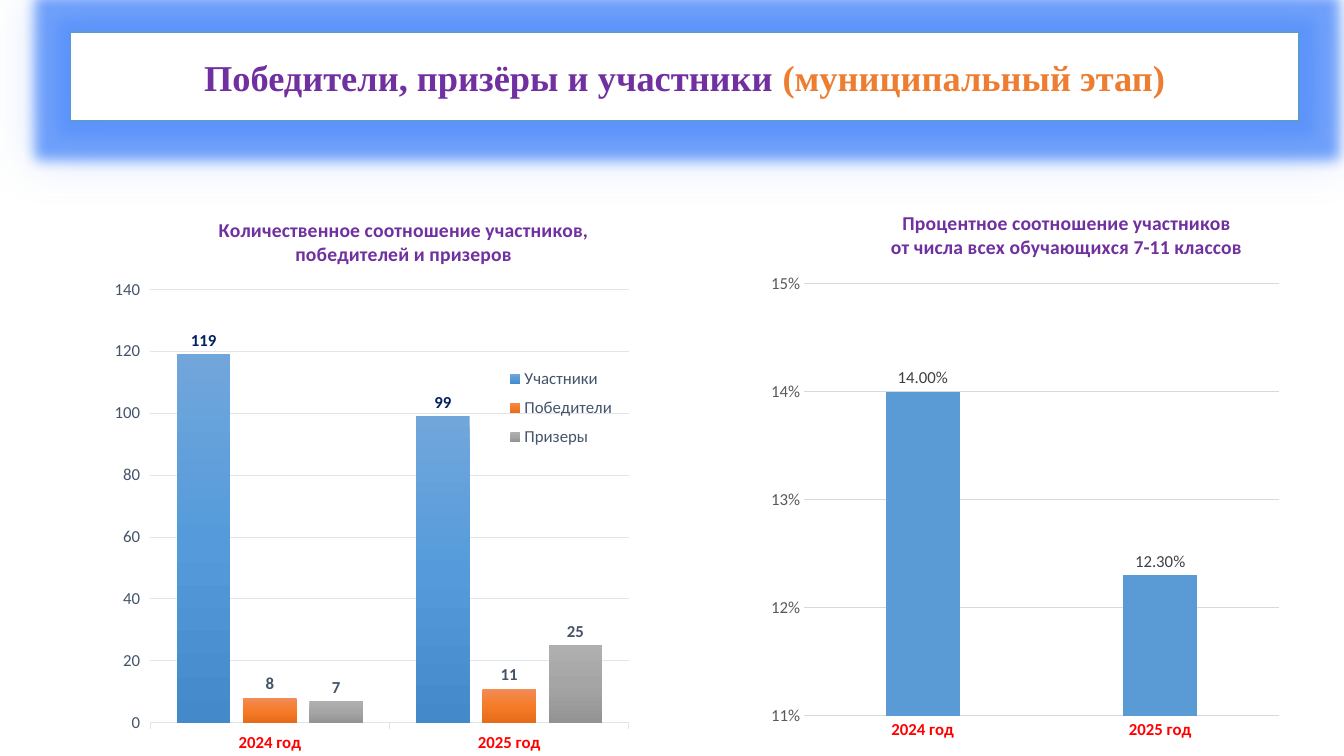
from dataclasses import dataclass
from copy import deepcopy

import lxml.etree
import pptx
import pptx.chart.data
import pptx.dml.color
import pptx.enum.chart
import pptx.enum.shapes
import pptx.enum.text
import pptx.oxml
import pptx.oxml.ns
import pptx.util

Cm, Pt = pptx.util.Cm, pptx.util.Pt
qn = pptx.oxml.ns.qn
COLORS = {
    "white": "FFFFFF", "blue": "5B9BD5", "glow": "5B93FA", "purple": "7030A0",
    "orange": "ED7D31", "red": "FF0000", "navy": "002060", "slate": "44546A",
    "gray": "595959", "dark": "404040", "grid": "D9D9D9", "pale": "E0E5EB",
}
YEARS = ["2024 год", "2025 год"]


@dataclass
class Series:
    name: str
    values: list[float]
    fill: list[str]
    label_color: str
    label_bold: bool = True


@dataclass
class Chart:
    box: tuple[float, float, float, float]
    title: str
    title_at: tuple[float, float]
    plot: tuple[float, float, float, float]
    series: list[Series]
    scale: tuple[float, float, float]
    axis_format: str
    label_format: str
    axis_color: str
    grid_color: str
    tick: pptx.enum.chart.XL_TICK_MARK
    gap: int
    overlap: int
    legend: tuple[float, float, float, float] | None = None


CHARTS = [
    Chart((19.25, 4.75, 15.62, 15.42),
          "Процентное соотношение участников\nот числа всех обучающихся 7-11 классов",
          (0.2, 0.03), (0.065, 0.156, 0.766, 0.706),
          [Series("Series 1", [0.14, 0.123], [COLORS["blue"]], "dark", False)],
          (0.11, 0.15, 0.01), "0%", "0.00%", "gray", "grid",
          pptx.enum.chart.XL_TICK_MARK.NONE, 219, -27),
    Chart((2.26, 5.08, 13.74, 14.25),
          "Количественное соотношение участников, победителей и призеров",
          (0.23, 0.02), (0.111, 0.155, 0.878, 0.767),
          [Series("Участники", [119, 99], ["71A6DB", "559BDB", "448ACA"], "navy"),
           Series("Победители", [8, 11], ["F18C57", "F67B28", "E56C19"], "slate"),
           Series("Призеры", [7, 25], ["AFAFAF", "A5A5A5", "939393"], "slate")],
          (0, 140, 20), "General", "General", "slate", "pale",
          pptx.enum.chart.XL_TICK_MARK.OUTSIDE, 100, -24, (0.75, 0.28, 0.23, 0.17)),
]


def rgb(value: str) -> pptx.dml.color.RGBColor:
    return pptx.dml.color.RGBColor.from_string(COLORS.get(value, value))


def set_font(font, size: float, color: str, bold: bool = False, name: str = "Calibri") -> None:
    font.size, font.bold, font.name = Pt(size), bold, name
    font.color.rgb = rgb(color)


def set_layout(element, place: tuple[float, ...], inner: bool = False) -> None:
    """Place a chart part by fractions of the chart: x, y and maybe w, h."""
    for old in element.findall(qn("c:layout")):
        element.remove(old)
    layout = pptx.oxml.parse_xml(f'<c:layout {pptx.oxml.ns.nsdecls("c")}><c:manualLayout/></c:layout>')
    parts = [("layoutTarget", "inner")] if inner else []
    parts += [("xMode", "edge"), ("yMode", "edge"), *zip("xywh", place)]
    for tag, value in parts:
        lxml.etree.SubElement(layout[0], qn(f"c:{tag}")).set("val", str(value))
    before = [e for e in element if e.tag in (qn("c:tx"), qn("c:legendPos"))]
    element.insert(len(before), layout)


def fill_series(s, colors: list[str]) -> None:
    fill = s.format.fill
    if len(colors) == 1:
        fill.solid()
        fill.fore_color.rgb = rgb(colors[0])
        return
    fill.gradient()
    fill.gradient_angle = 270
    stops = s.format.element.find(".//" + qn("a:gsLst")) if hasattr(s.format, "element") \
        else s._element.find(".//" + qn("a:gsLst"))
    stops.insert(1, deepcopy(stops[0]))
    for i, (stop, color) in enumerate(zip(fill.gradient_stops, colors)):
        stop.position = i / (len(colors) - 1)
        stop.color.rgb = rgb(color)


def style_axes(chart, c: Chart) -> None:
    cat, val = chart.category_axis, chart.value_axis
    set_font(cat.tick_labels.font, 12, "red", True)
    set_font(val.tick_labels.font, 12, c.axis_color)
    for axis in (cat, val):
        axis.major_tick_mark = c.tick
        axis.minor_tick_mark = pptx.enum.chart.XL_TICK_MARK.NONE
    val.minimum_scale, val.maximum_scale, val.major_unit = c.scale
    val.tick_labels.number_format = c.axis_format
    val.tick_labels.number_format_is_linked = False
    val.format.line.fill.background()
    for line in (cat.format.line, val.major_gridlines.format.line):
        line.color.rgb = rgb(c.grid_color)
        line.width = Pt(0.75)


def add_chart(slide, c: Chart) -> None:
    data = pptx.chart.data.CategoryChartData(number_format=c.label_format)
    data.categories = YEARS
    for item in c.series:
        data.add_series(item.name, item.values)
    chart = slide.shapes.add_chart(
        pptx.enum.chart.XL_CHART_TYPE.COLUMN_CLUSTERED, *map(Cm, c.box), data).chart
    set_font(chart.font, 10, "000000")
    tf = chart.chart_title.text_frame
    tf.text = c.title
    for p in tf.paragraphs:
        set_font(p.font, 14, "purple", True)
    chart.chart_title.include_in_layout = False
    set_layout(chart.chart_title._element, c.title_at)
    style_axes(chart, c)
    plot = chart.plots[0]
    plot.gap_width, plot.overlap, plot.vary_by_categories = c.gap, c.overlap, False
    set_layout(chart._chartSpace.chart.plotArea, c.plot, inner=True)
    for s, item in zip(plot.series, c.series):
        fill_series(s, item.fill)
        labels = s.data_labels
        labels.show_value = True
        labels.position = pptx.enum.chart.XL_LABEL_POSITION.OUTSIDE_END
        labels.number_format = c.label_format
        labels.number_format_is_linked = False
        set_font(labels.font, 12, item.label_color, item.label_bold)
    chart.has_legend = c.legend is not None
    if c.legend:
        chart.legend.position = pptx.enum.chart.XL_LEGEND_POSITION.RIGHT
        chart.legend.include_in_layout = False
        set_font(chart.legend.font, 12, "slate")
        set_layout(chart.legend._element, c.legend)


def add_glow(sp) -> None:
    """Give the shape a strong glow inside a wider, paler halo."""
    effects = pptx.oxml.parse_xml(
        f'<a:effectLst {pptx.oxml.ns.nsdecls("a")}><a:glow rad="228600"/>'
        '<a:outerShdw blurRad="406400" dist="0" algn="ctr" rotWithShape="0"/></a:effectLst>')
    for effect, alpha in zip(effects, ("85000", "60000")):
        color = lxml.etree.SubElement(effect, qn("a:srgbClr"), val=COLORS["glow"])
        lxml.etree.SubElement(color, qn("a:alpha"), val=alpha)
    for old in sp._element.spPr.findall(qn("a:effectLst")):
        sp._element.spPr.remove(old)
    sp._element.spPr.append(effects)


def add_heading(slide) -> None:
    sp = slide.shapes.add_shape(pptx.enum.shapes.MSO_SHAPE.RECTANGLE,
                                *map(Cm, (1.78, 0.81, 30.96, 2.24)))
    sp.fill.solid()
    sp.fill.fore_color.rgb = rgb("white")
    sp.line.color.rgb = rgb("blue")
    sp.line.width = Pt(1)
    add_glow(sp)
    tf = sp.text_frame
    tf.word_wrap = True
    tf.vertical_anchor = pptx.enum.text.MSO_ANCHOR.MIDDLE
    p = tf.paragraphs[0]
    p.alignment = pptx.enum.text.PP_ALIGN.CENTER
    for text, color in (("Победители, призёры и участники ", "purple"),
                        ("(муниципальный этап)", "orange")):
        r = p.add_run()
        r.text = text
        set_font(r.font, 26, color, True, "Times New Roman")


def main() -> None:
    prs = pptx.Presentation()
    prs.slide_width, prs.slide_height = Cm(33.87), Cm(19.05)
    slide = prs.slides.add_slide(prs.slide_layouts[6])
    add_heading(slide)
    for c in CHARTS:
        add_chart(slide, c)
    prs.save("out.pptx")


if __name__ == "__main__":
    main()
